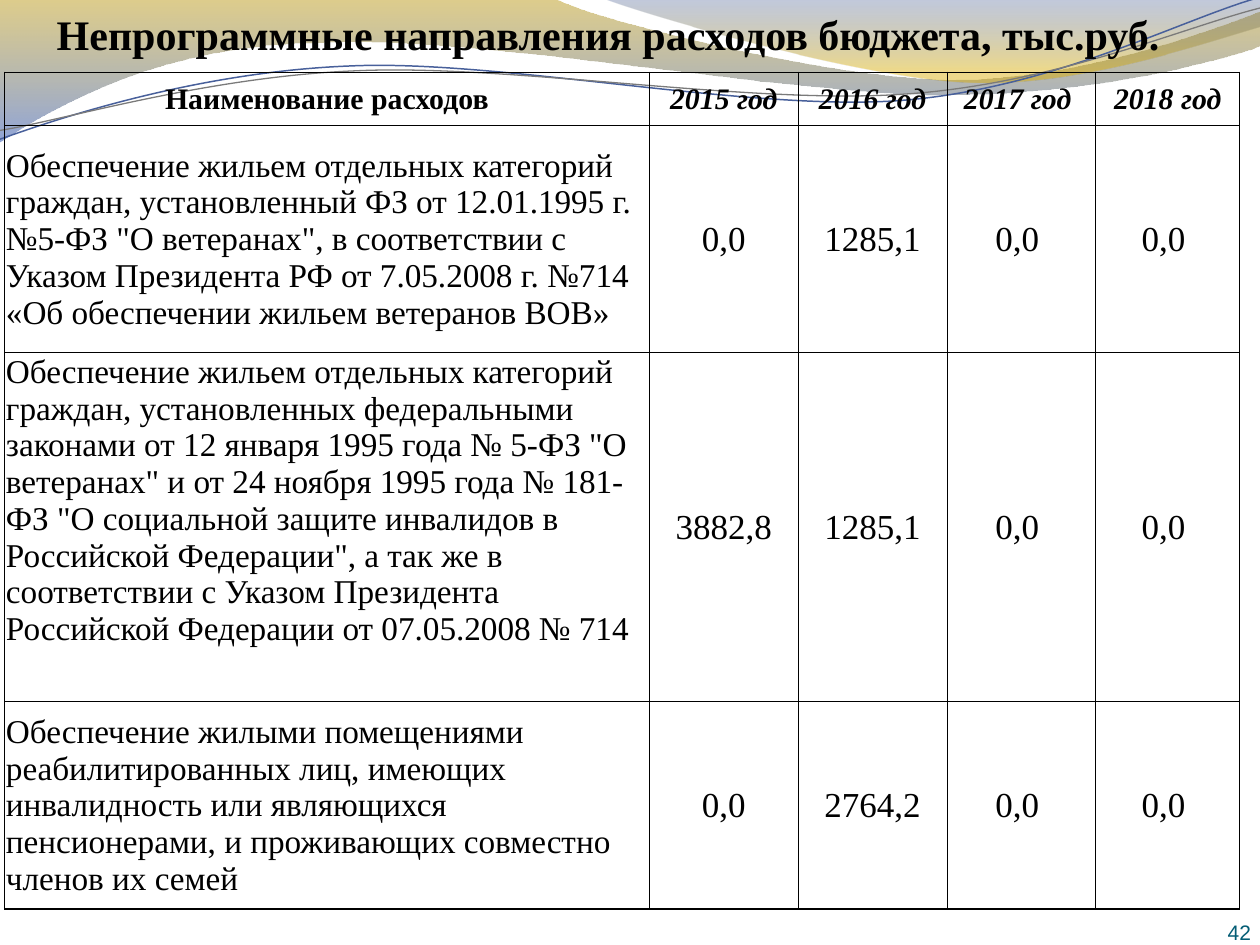
from pptx import Presentation
from pptx import util as u
from pptx.dml.color import RGBColor
from pptx.enum import text
from pptx.oxml.ns import qn
from lxml import etree

INCH = 2.54  # wave outlines are given in inches
SERIF = "Times New Roman"

# Outlines: first the start, then lines (2 numbers) or curves (6 numbers)
LEFT = [(0, -.01), (4.4, -.01), (4.76, .17, 6.64, .63, 7.58, .63),
        (8.53, .63, 9.58, .26, 10, .09), (10.01, .36),
        (9.83, .44, 8.7, .76, 7.46, .75), (6.22, .75, 3.82, .28, 2.57, .34),
        (1.29, .35, .46, .83, -.01, 1.13), (0, -.01)]
RIGHT = [(4.79, -.01), (5.09, .11, 6.82, .62, 7.69, .65),
         (8.56, .69, 9.61, .32, 10, .21), (10, 0), (4.79, -.01)]
BLUE = [(-.02, .87), (.47, .72, 1.58, .41, 2.78, .42),
        (3.96, .42, 5.91, .93, 7.12, .9), (8.32, .87, 9.4, .36, 10, .22)]
GREY = [(-.02, .8), (.46, .75, 1.64, .45, 2.83, .46),
        (4.03, .46, 5.96, .88, 7.16, .85), (8.35, .83, 9.42, .42, 10.02, .3)]
TILT = -2.7

COLS = [13, 3, 3, 3, 2.9]
ROWS = [1.07, 4.58, 7.03, 4.19]
DATA = [
    ["Наименование расходов", "2015 год", "2016 год", "2017 год ", "2018 год"],
    ["Обеспечение жильем отдельных категорий граждан, установленный ФЗ от "
     "12.01.1995 г. №5-ФЗ \"О ветеранах\", в соответствии с Указом Президента "
     "РФ от 7.05.2008 г. №714 «Об обеспечении жильем ветеранов ВОВ»",
     "0,0", "1285,1", "0,0", "0,0"],
    ["Обеспечение жильем отдельных категорий граждан, установленных "
     "федеральными законами от 12 января 1995 года № 5-ФЗ \"О ветеранах\" и от "
     "24 ноября 1995 года № 181-ФЗ \"О социальной защите инвалидов в "
     "Российской Федерации\", а так же в соответствии с Указом Президента "
     "Российской Федерации от 07.05.2008 № 714",
     "3882,8", "1285,1", "0,0", "0,0"],
    ["Обеспечение жилыми помещениями реабилитированных лиц, имеющих "
     "инвалидность или являющихся пенсионерами, и проживающих совместно "
     "членов их семей", "0,0", "2764,2", "0,0", "0,0"],
]


def color(code):
    return RGBColor.from_string(code)


def assign(obj, **vals):
    for key, val in vals.items():
        setattr(obj, key, val)


def write(frame, words, align, size, ink="000000", name=SERIF, **style):
    frame.text = words
    par = frame.paragraphs[0]
    par.alignment = align
    assign(par.font, size=u.Pt(size), name=name, **style)
    par.font.color.rgb = color(ink)


def outline(slide, path, close):
    """Lay all points as lines, then join each curve's three into one."""
    pts = [(u.Cm(INCH * x), u.Cm(INCH * y))
           for seg in path for x, y in zip(seg[::2], seg[1::2])]
    form = slide.shapes.build_freeform(*pts[0])
    form.add_line_segments(pts[1:], close=close)
    shape = form.convert_to_shape()
    shape.shadow.inherit = False
    lines = iter(list(shape.element.iter(qn("a:lnTo"))))
    for seg in path[1:]:
        first = next(lines)
        if len(seg) == 6:
            first.tag = qn("a:cubicBezTo")
            for other in (next(lines), next(lines)):
                first.append(other[0])
                other.getparent().remove(other)
    return shape


def add_wave(slide, path, stops):
    shape = outline(slide, path, True)
    shape.line.fill.background()
    shape.fill.gradient()
    shape.fill.gradient_angle = 270
    for stop, (pos, code, _) in zip(shape.fill.gradient_stops, stops):
        stop.position = pos
        stop.color.rgb = color(code)
    tints = shape.element.spPr.iter(qn("a:srgbClr"))
    for tint, (_, _, alpha) in zip(tints, stops):
        etree.SubElement(tint, qn("a:alpha"), val=str(alpha * 1000))


def add_curve(slide, path, code, width):
    shape = outline(slide, path, False)
    shape.rotation = TILT
    shape.fill.background()
    shape.line.color.rgb = color(code)
    shape.line.width = u.Pt(width)


def add_title(slide, words):
    title = slide.shapes.title
    assign(title, left=u.Cm(.89), top=u.Cm(.05),
           width=u.Cm(23.39), height=u.Cm(1.3))
    write(title.text_frame, words, text.PP_ALIGN.LEFT, 24, bold=True)
    assign(title.text_frame, word_wrap=True,
           auto_size=text.MSO_AUTO_SIZE.SHAPE_TO_FIT_TEXT,
           vertical_anchor=text.MSO_ANCHOR.TOP)
    slide.shapes.element.append(title.element)  # in front of the waves


def edge(cell, side, width):
    props = cell._tc.get_or_add_tcPr()
    line = etree.SubElement(props, qn("a:ln" + side), w=str(u.Pt(width)))
    fill = etree.SubElement(line, qn("a:solidFill"))
    etree.SubElement(fill, qn("a:srgbClr"), val="000000")


def fill_cell(cell, words, row, col):
    mid, left = text.PP_ALIGN.CENTER, text.PP_ALIGN.LEFT
    if row == 0:
        write(cell.text_frame, words, mid, 17, bold=True, italic=col > 0)
    elif col == 0:
        write(cell.text_frame, words, left, 19, bold=False)
    else:
        write(cell.text_frame, words, mid, 20, bold=False)
    high = row == 2 and col == 0
    assign(cell, margin_left=u.Cm(.03), margin_top=u.Cm(.03), margin_bottom=0,
           margin_right=u.Cm(.2 if row and col > 2 else .03),
           vertical_anchor=text.MSO_ANCHOR.TOP if high
           else text.MSO_ANCHOR.MIDDLE)
    # Borders come before the fill; outer right and bottom are thicker
    for side in "LRTB":
        outer = (side == "R" and col == len(COLS) - 1
                 or side == "B" and row == len(ROWS) - 1)
        edge(cell, side, 1 if outer else .5)
    cell.fill.background()


def add_grid(slide):
    grid = slide.shapes.add_table(
        len(ROWS), len(COLS), u.Cm(.09), u.Cm(1.45),
        u.Cm(sum(COLS)), u.Cm(sum(ROWS))).table
    assign(grid, first_row=False, horz_banding=False)
    for col, width in zip(grid.columns, COLS):
        col.width = u.Cm(width)
    for row, height in zip(grid.rows, ROWS):
        row.height = u.Cm(height)
    for r, line in enumerate(DATA):
        for c, words in enumerate(line):
            fill_cell(grid.cell(r, c), words, r, c)


def add_number(slide, words):
    box = slide.shapes.add_textbox(u.Cm(23.1), u.Cm(18.03),
                                   u.Cm(2.12), u.Cm(1.02))
    frame = box.text_frame
    assign(frame, word_wrap=True, margin_left=0, margin_right=0, margin_top=0,
           margin_bottom=0, vertical_anchor=text.MSO_ANCHOR.BOTTOM)
    write(frame, words, text.PP_ALIGN.RIGHT, 12, "045D75", "Arial")


def main():
    deck = Presentation()
    assign(deck, slide_width=u.Cm(25.4), slide_height=u.Cm(19.05))
    slide = deck.slides.add_slide(deck.slide_layouts[5])
    # Backdrop
    add_wave(slide, LEFT, [(0, "B69000", 45), (1, "3359B7", 55)])
    add_wave(slide, RIGHT, [(0, "324C8D", 30), (.8, "D9AC00", 45)])
    add_curve(slide, BLUE, "48609B", .85)
    add_curve(slide, GREY, "7A7A7A", .75)
    # Content
    add_title(slide, "Непрограммные направления расходов бюджета, тыс.руб.")
    add_grid(slide)
    add_number(slide, "42")
    deck.save("out.pptx")


if __name__ == "__main__":
    main()
